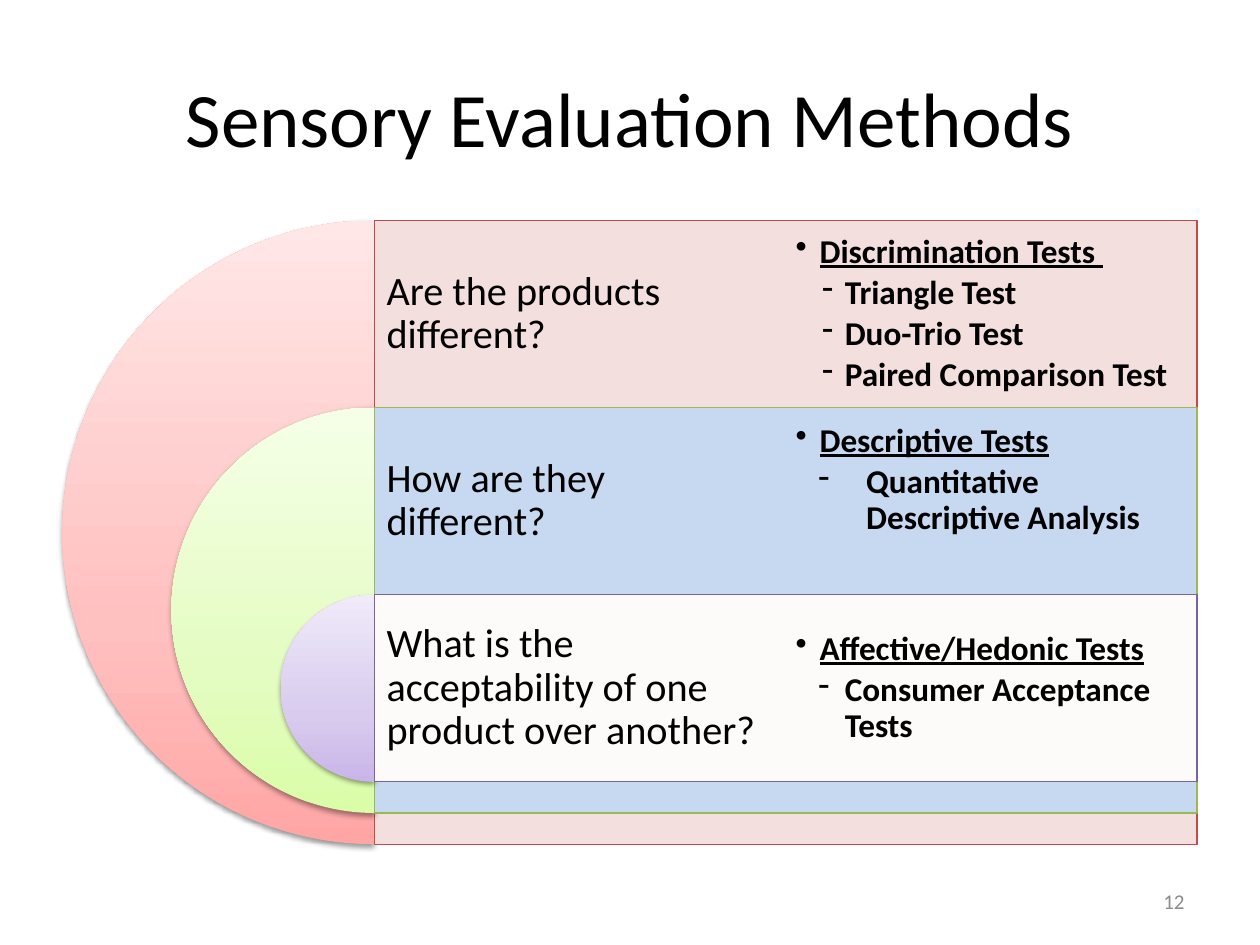
import copy

import pptx
import pptx.dml.color
import pptx.enum.shapes
import pptx.enum.text
import pptx.oxml
import pptx.oxml.ns
import pptx.util

FONT = "Calibri"
AXIS, RIGHT, TOP = 2.97, 9.5, 1.75
DIAMETER = 4.95
BAND = 0.3 * DIAMETER
LIST_WIDTH = (RIGHT - AXIS) / 2

RINGS = [
    (1, ("FFA6A5", "FFC0BF", "FFE7E7"), "F2DCDB", 90, "BF4C48",
     "Are the products different?"),
    (0.65, ("DAFDA7", "E4FCC2", "F5FFE7"), "C6D9F1", 100, "98B955",
     "How are they different?"),
    (0.3, ("C9B5E8", "D8CBEE", "F0EAF9"), "FCFBF9", 100, "7D60A0",
     "What is the acceptability of one product over another?"),
]

LISTS = [
    ("Discrimination Tests ",
     ["Triangle Test", "Duo-Trio Test", "Paired Comparison Test"], 0.39, 0.18, 0.08),
    ("Descriptive Tests", ["Quantitative Descriptive Analysis"], 0.56, 0.38, 0.41),
    ("Affective/Hedonic Tests", ["Consumer Acceptance Tests"], 0.39, 0.21, 0.08),
]


def color(value):
    """Turn a hex string into a colour."""
    return pptx.dml.color.RGBColor.from_string(value)


def frame(left, top, width, height):
    """Turn a place in inches into lengths."""
    return [pptx.util.Inches(value) for value in (left, top, width, height)]


def add_xml(parent, markup):
    """Append a drawing element to a parent."""
    namespace = pptx.oxml.ns.nsdecls("a")
    parent.append(pptx.oxml.parse_xml(markup.replace("/>", f" {namespace}/>", 1)
                                      if markup.endswith("/>") and markup.count("<") == 1
                                      else markup.replace(">", f" {namespace}>", 1)))


def style(para, size, value="000000", bold=False, underline=False):
    """Set the font of a paragraph."""
    font = para.font
    font.name, font.size = FONT, pptx.util.Pt(size)
    font.bold, font.underline = bold, underline
    font.color.rgb = color(value)


def set_insets(text, left, top, right, bottom):
    """Wrap a text frame, centre it vertically and set its margins."""
    text.word_wrap = True
    text.vertical_anchor = pptx.enum.text.MSO_ANCHOR.MIDDLE
    text.margin_left, text.margin_top, text.margin_right, text.margin_bottom = frame(
        left, top, right, bottom)


def add_title(page, words):
    """Fill and place the title placeholder."""
    box = page.shapes.title
    box.left, box.top, box.width, box.height = frame(0.5, 0.3, 9, 1.25)
    box.text_frame.text = words
    style(box.text_frame.paragraphs[0], 44)


def add_half_disc(page, top, diameter, shades):
    """Draw a shaded half disc that ends at the axis."""
    disc = page.shapes.add_shape(pptx.enum.shapes.MSO_SHAPE.PIE, *frame(
        AXIS - diameter / 2, top, diameter, diameter))
    disc.adjustments[0], disc.adjustments[1] = 54, 162
    disc.line.fill.background()
    disc.fill.gradient()
    disc.fill.gradient_angle = 90
    stops = disc._element.spPr.find(".//" + pptx.oxml.ns.qn("a:gsLst"))
    stops.append(copy.deepcopy(stops[-1]))
    for stop, position, shade in zip(disc.fill.gradient_stops, (0, 0.35, 1), shades):
        stop.position = position
        stop.color.rgb = color(shade)
    disc.shadow.inherit = False
    add_xml(disc._element.spPr.find(pptx.oxml.ns.qn("a:effectLst")),
            '<a:outerShdw blurRad="39370" dist="20320" dir="5400000" rotWithShape="0">'
            '<a:srgbClr val="000000"><a:alpha val="38000"/></a:srgbClr></a:outerShdw>')


def add_bar(page, top, height, fill, opacity, line, question):
    """Draw a bar with its question in the upper left band."""
    bar = page.shapes.add_shape(pptx.enum.shapes.MSO_SHAPE.RECTANGLE, *frame(
        AXIS, top, RIGHT - AXIS, height))
    bar.shadow.inherit = False
    bar.fill.solid()
    bar.fill.fore_color.rgb = color(fill)
    if opacity < 100:
        shade = bar._element.spPr.find(".//" + pptx.oxml.ns.qn("a:srgbClr"))
        add_xml(shade, f'<a:alpha val="{opacity * 1000}"/>')
    bar.line.color.rgb = color(line)
    bar.line.width = pptx.util.Pt(0.75)
    set_insets(bar.text_frame, 0.1, 0.1, LIST_WIDTH + 0.1, height - BAND + 0.1)
    para = bar.text_frame.paragraphs[0]
    para.text = question
    para.alignment = pptx.enum.text.PP_ALIGN.LEFT
    para.line_spacing = 0.9
    style(para, 23)


def add_bullet(para, mark, margin, hang):
    """Give a paragraph a hanging bullet."""
    properties = para._p.get_or_add_pPr()
    properties.set("marL", str(pptx.util.Inches(margin)))
    properties.set("indent", str(-pptx.util.Inches(hang)))
    para.line_spacing = 0.9
    para.space_after = pptx.util.Pt(3)
    add_xml(properties, f'<a:buChar char="{mark}"/>')


def add_list(page, top, heading, tests, margin, hang, bottom):
    """Write an underlined heading with its tests below."""
    box = page.shapes.add_textbox(*frame(RIGHT - LIST_WIDTH, top, LIST_WIDTH, BAND))
    text = box.text_frame
    set_insets(text, 0.08, 0.08, 0.08, bottom)
    para = text.paragraphs[0]
    para.text = heading
    add_bullet(para, "•", 0.19, 0.19)
    style(para, 19, bold=True, underline=True)
    for test in tests:
        para = text.add_paragraph()
        para.text = test
        add_bullet(para, "-", margin, hang)
        style(para, 19, bold=True)


def add_page_number(page, number):
    """Write the page number at the lower right."""
    box = page.shapes.add_textbox(*frame(7.17, 6.95, 2.33, 0.4))
    set_insets(box.text_frame, 0.1, 0.05, 0.1, 0.05)
    para = box.text_frame.paragraphs[0]
    para.text = number
    para.alignment = pptx.enum.text.PP_ALIGN.RIGHT
    style(para, 12, "8C8C8C")


def main():
    """Build the slide and save it."""
    deck = pptx.Presentation()
    deck.slide_width, deck.slide_height = pptx.util.Inches(10), pptx.util.Inches(7.5)
    page = deck.slides.add_slide(deck.slide_layouts[5])
    add_title(page, "Sensory Evaluation Methods")
    add_page_number(page, "12")
    for row, (share, shades, *bar) in enumerate(RINGS):
        top = TOP + row * BAND
        add_half_disc(page, top, share * DIAMETER, shades)
        add_bar(page, top, share * DIAMETER, *bar)
    for row, entry in enumerate(LISTS):
        add_list(page, TOP + row * BAND, *entry)
    deck.save("out.pptx")


if __name__ == "__main__":
    main()
